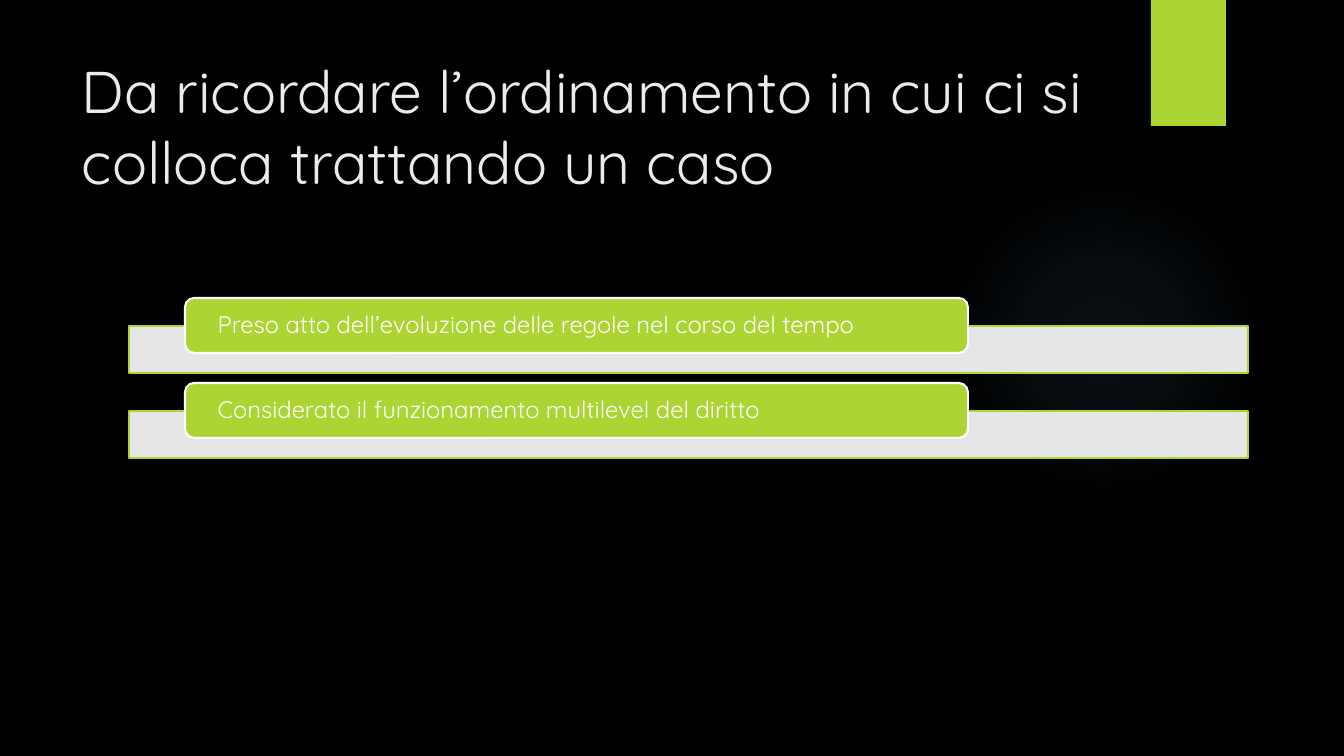
import pptx
import pptx.dml.color
import pptx.enum.shapes
import pptx.enum.text
import pptx.oxml
import pptx.oxml.ns
import pptx.util

PX = 914400 / 100.8
LIME = "ACD433"
WHITE = "FFFFFF"
FONT = "Quicksand"
SHAPES = pptx.enum.shapes.MSO_SHAPE
ANCHORS = pptx.enum.text.MSO_ANCHOR
color = pptx.dml.color.RGBColor.from_string

deck = pptx.Presentation()
deck.slide_width, deck.slide_height = round(1344 * PX), round(756 * PX)
page = deck.slides.add_slide(deck.slide_layouts[6])
page.background.fill.solid()
page.background.fill.fore_color.rgb = color("000000")


def add_block(kind, bounds, fill, line=None):
    """Add a filled preset shape; bounds are left, top, width, height in px."""
    block = page.shapes.add_shape(kind, *[round(side * PX) for side in bounds])
    block.shadow.inherit = False
    block.fill.solid()
    block.fill.fore_color.rgb = color(fill)
    if line:
        block.line.color.rgb = color(line)
        block.line.width = pptx.util.Pt(1.5)
    else:
        block.line.fill.background()
    return block


def write(box, text, size, ink, anchor, inset_x, inset_y):
    frame = box.text_frame
    frame.word_wrap = True
    frame.vertical_anchor = anchor
    frame.margin_left = frame.margin_right = round(inset_x * PX)
    frame.margin_top = frame.margin_bottom = round(inset_y * PX)
    para = frame.paragraphs[0]
    para.alignment = pptx.enum.text.PP_ALIGN.LEFT
    span = para.add_run()
    span.text = text
    span.font.name = FONT
    span.font.size = pptx.util.Pt(size)
    span.font.color.rgb = color(ink)
    return para


# Soft glow and ribbon behind the content
glow = add_block(SHAPES.OVAL, (949, 184, 310, 310), "7AC4F0")
stops = "".join(
    f'<a:gs pos="{place * 1000}"><a:srgbClr val="7AC4F0">'
    f'<a:alpha val="{alpha * 1000}"/></a:srgbClr></a:gs>'
    for place, alpha in ((0, 7), (36, 6), (69, 0), (100, 0))
)
gradient = pptx.oxml.parse_xml(
    f'<a:gradFill {pptx.oxml.ns.nsdecls("a")}><a:gsLst>{stops}</a:gsLst>'
    '<a:path path="circle"><a:fillToRect l="50000" t="50000" r="50000" b="50000"/>'
    '</a:path></a:gradFill>'
)
solid = glow.element.spPr.find(pptx.oxml.ns.qn("a:solidFill"))
glow.element.spPr.replace(solid, gradient)

add_block(SHAPES.RECTANGLE, (1151, 0, 75, 126), LIME)

title = page.shapes.add_textbox(*[round(side * PX) for side in (72, 50, 1037, 154)])
write(title, "Da ricordare l’ordinamento in cui ci si colloca trattando un caso",
      42, "EBEBEB", ANCHORS.TOP, 10, 5)

# Each point is a lime label over a translucent bar
points = (
    "Preso atto dell’evoluzione delle regole nel corso del tempo",
    "Considerato il funzionamento multilevel del diritto",
)
for index, point in enumerate(points):
    top = 298 + 85 * index
    bar = add_block(SHAPES.RECTANGLE, (129, top + 28, 1119, 47), WHITE, LIME)
    bar_color = bar.element.spPr.find(pptx.oxml.ns.qn("a:solidFill"))[0]
    bar_color.append(pptx.oxml.parse_xml(
        f'<a:alpha {pptx.oxml.ns.nsdecls("a")} val="90000"/>'))
    label = add_block(SHAPES.ROUNDED_RECTANGLE, (185, top, 783, 55), LIME, WHITE)
    para = write(label, point, 17, WHITE, ANCHORS.MIDDLE, 30, 0)
    para.line_spacing = 0.9

deck.save("out.pptx")
